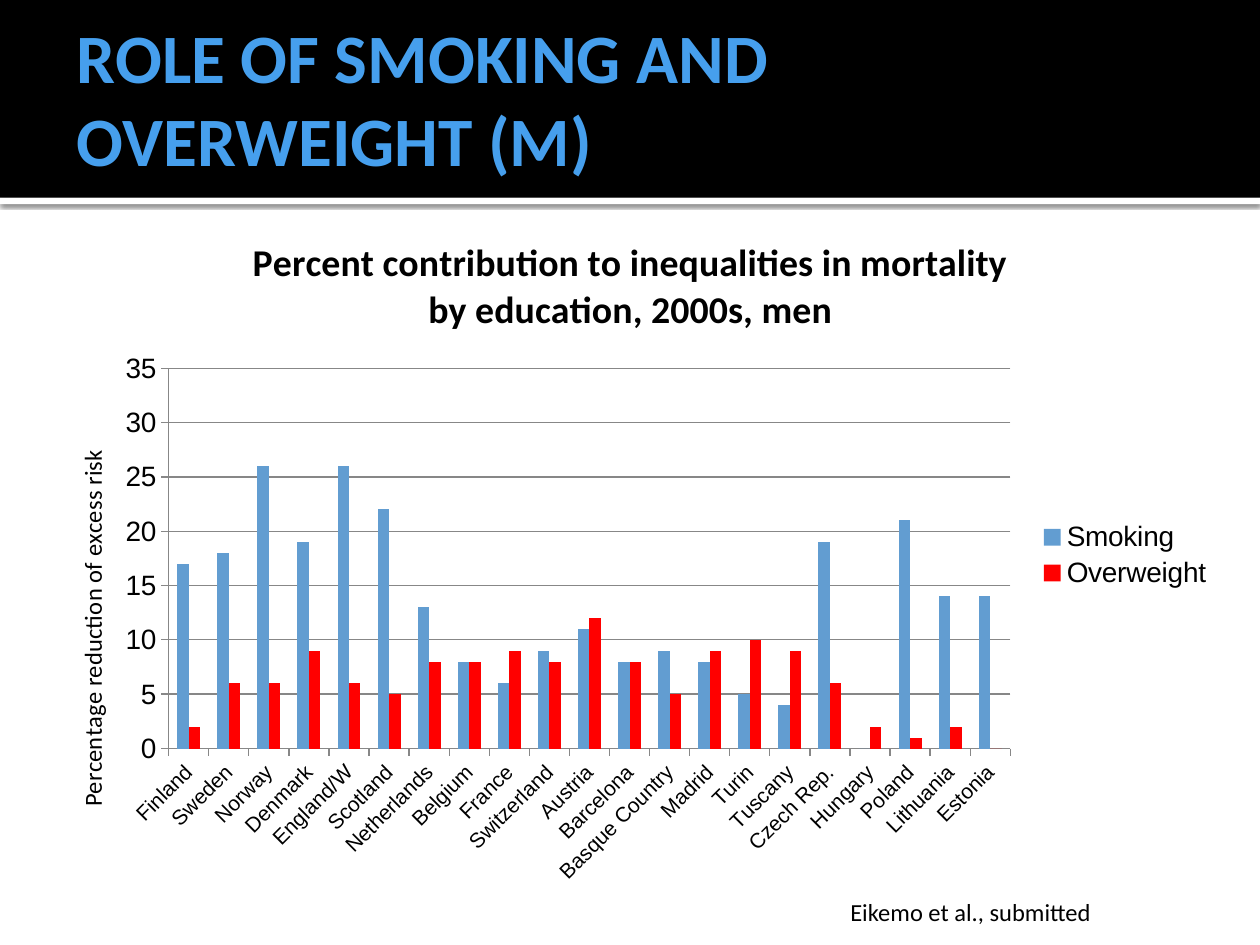
from lxml.etree import SubElement
from pptx import Presentation
from pptx.chart.data import CategoryChartData
from pptx.dml.color import RGBColor
from pptx.enum.chart import XL_CHART_TYPE as ChartType, XL_LEGEND_POSITION as LegendSide
from pptx.enum.chart import XL_TICK_MARK as Tick
from pptx.enum.shapes import MSO_SHAPE as Shape
from pptx.enum.text import MSO_ANCHOR as Anchor, MSO_AUTO_SIZE as AutoSize, PP_ALIGN as Align
from pptx.oxml import parse_xml
from pptx.oxml.ns import nsdecls, qn
from pptx.util import Inches, Pt

BLACK = RGBColor(0x00, 0x00, 0x00)
WHITE = RGBColor(0xFF, 0xFF, 0xFF)
TITLE_BLUE = RGBColor(0x46, 0x9F, 0xED)
BAR_BLUE = RGBColor(0x62, 0x9D, 0xD1)
RED = RGBColor(0xFF, 0x00, 0x00)
GREY = RGBColor(0x87, 0x87, 0x87)

TITLE = "ROLE OF SMOKING AND OVERWEIGHT (M)"
CHART_TITLE = ["Percent contribution to inequalities in mortality", "by education, 2000s, men"]
AXIS_TITLE = "Percentage reduction of excess risk"
SOURCE = "Eikemo et al., submitted"
BANDS = [(1.57, 0.05, WHITE), (0, 1.57, BLACK)]
SERIES = [("Smoking", BAR_BLUE), ("Overweight", RED)]
COUNTRIES = [
    ("Finland", 17, 2), ("Sweden", 18, 6), ("Norway", 26, 6), ("Denmark", 19, 9),
    ("England/W", 26, 6), ("Scotland", 22, 5), ("Netherlands", 13, 8),
    ("Belgium", 8, 8), ("France", 6, 9), ("Switzerland", 9, 8), ("Austria", 11, 12),
    ("Barcelona", 8, 8), ("Basque Country", 9, 5), ("Madrid", 8, 9), ("Turin", 5, 10),
    ("Tuscany", 4, 9), ("Czech Rep.", 19, 6), ("Hungary", 0, 2), ("Poland", 21, 1),
    ("Lithuania", 14, 2), ("Estonia", 14, 0),
]


def style(font, name, size, color=BLACK, bold=False):
    for key, value in {"name": name, "size": Pt(size), "bold": bold}.items():
        setattr(font, key, value)
    font.color.rgb = color


def place(shape, *lengths):
    for key, length in zip(("left", "top", "width", "height"), lengths):
        setattr(shape, key, Inches(length))


def set_layout(owner, **values):
    for old in owner.findall(qn("c:layout")):
        owner.remove(old)
    layout = parse_xml(f"<c:layout {nsdecls('c')}/>")
    manual = SubElement(layout, qn("c:manualLayout"))
    for tag, value in values.items():
        SubElement(manual, qn(f"c:{tag}")).set("val", str(value))
    return layout


def add_bands(page, width):
    for top, height, color in BANDS:
        band = page.shapes.add_shape(Shape.RECTANGLE, 0, Inches(top), width, Inches(height))
        band.fill.solid()
        band.fill.fore_color.rgb = color
        band.line.fill.background()
        band.shadow.inherit = False
        if color == WHITE:
            effects = band.fill._xPr.find(qn("a:effectLst"))
            effects.append(parse_xml(
                f'<a:outerShdw {nsdecls("a")} blurRad="{Pt(2.5)}" dist="{Pt(0.8)}" dir="5400000">'
                '<a:srgbClr val="000000"><a:alpha val="60000"/></a:srgbClr></a:outerShdw>'))


def add_title(page):
    title = page.shapes.title
    place(title, 0.51, 0.21, 8.5, 1.49)
    frame = title.text_frame
    frame.text = TITLE
    settings = {
        "vertical_anchor": Anchor.MIDDLE, "auto_size": AutoSize.NONE, "word_wrap": True,
        "margin_left": Inches(0.1), "margin_top": Inches(0.05),
        "margin_right": Inches(0.05), "margin_bottom": Inches(0.42),
    }
    for key, value in settings.items():
        setattr(frame, key, value)
    para = frame.paragraphs[0]
    para.alignment = Align.LEFT
    style(para.runs[0].font, "Calibri", 39.6, TITLE_BLUE, True)
    page.shapes._spTree.append(title.element)


def add_chart(page):
    data = CategoryChartData()
    data.categories = [row[0] for row in COUNTRIES]
    for column, (name, color) in enumerate(SERIES, 1):
        data.add_series(name, [row[column] for row in COUNTRIES])
    area = [Inches(length) for length in (0.28, 1.69, 9.45, 5.43)]
    chart = page.shapes.add_chart(ChartType.COLUMN_CLUSTERED, *area, data).chart
    style(chart.font, "Calibri", 18)

    chart.has_title = True
    heading = chart.chart_title.text_frame
    heading.text = "\n".join(CHART_TITLE)
    for para in heading.paragraphs:
        style(para.runs[0].font, "Calibri", 21.6, bold=True)

    chart.has_legend = True
    chart.legend.position = LegendSide.RIGHT
    chart.legend.include_in_layout = False
    style(chart.legend.font, "Arial", 16)

    plot = chart.plots[0]
    plot.gap_width = 150
    plot.overlap = 0
    plot.vary_by_categories = False
    for series, (name, color) in zip(plot.series, SERIES):
        series.format.fill.solid()
        series.format.fill.fore_color.rgb = color

    values = chart.value_axis
    for axis, size in ((chart.category_axis, 12), (values, 16)):
        style(axis.tick_labels.font, "Arial", size)
        axis.major_tick_mark = Tick.OUTSIDE
        axis.minor_tick_mark = Tick.NONE
        axis.format.line.color.rgb = GREY
    body = chart.category_axis._element.find(qn("c:txPr")).find(qn("a:bodyPr"))
    body.set("rot", "-2700000")
    for key, value in {"minimum_scale": 0, "maximum_scale": 35, "major_unit": 5}.items():
        setattr(values, key, value)
    values.has_major_gridlines = True
    values.major_gridlines.format.line.color.rgb = GREY
    label = values.axis_title
    label.text_frame.text = AXIS_TITLE
    label.text_frame._txBody.find(qn("a:bodyPr")).set("rot", "-5400000")
    style(label.text_frame.paragraphs[0].runs[0].font, "Calibri", 14)

    caption = label._element
    caption.find(qn("c:tx")).addnext(
        set_layout(caption, xMode="edge", yMode="edge", x=0.03, y=0.34))
    plot_area = chart._chartSpace.chart.plotArea
    plot_area.insert(0, set_layout(
        plot_area, layoutTarget="inner", xMode="edge", yMode="edge",
        x=0.112, y=0.227, w=0.707, h=0.556))


def add_source(page):
    box = page.shapes.add_textbox(*[Inches(length) for length in (6.65, 7.07, 2.76, 0.34)])
    box.text_frame.word_wrap = True
    box.text_frame.text = SOURCE
    style(box.text_frame.paragraphs[0].runs[0].font, "Calibri", 14)


def main():
    deck = Presentation()
    deck.slide_width, deck.slide_height = Inches(10), Inches(7.5)
    page = deck.slides.add_slide(deck.slide_layouts[5])
    add_bands(page, deck.slide_width)
    add_title(page)
    add_chart(page)
    add_source(page)
    deck.save("out.pptx")


if __name__ == "__main__":
    main()
